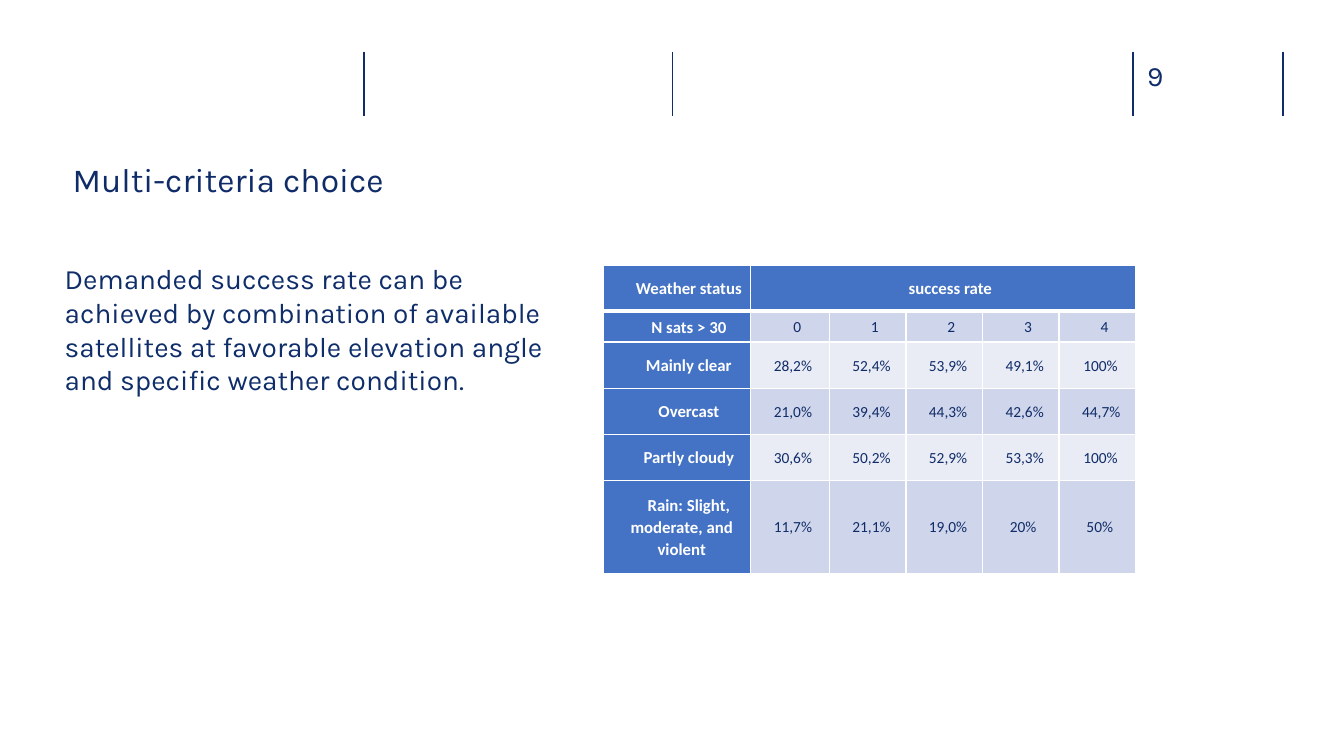
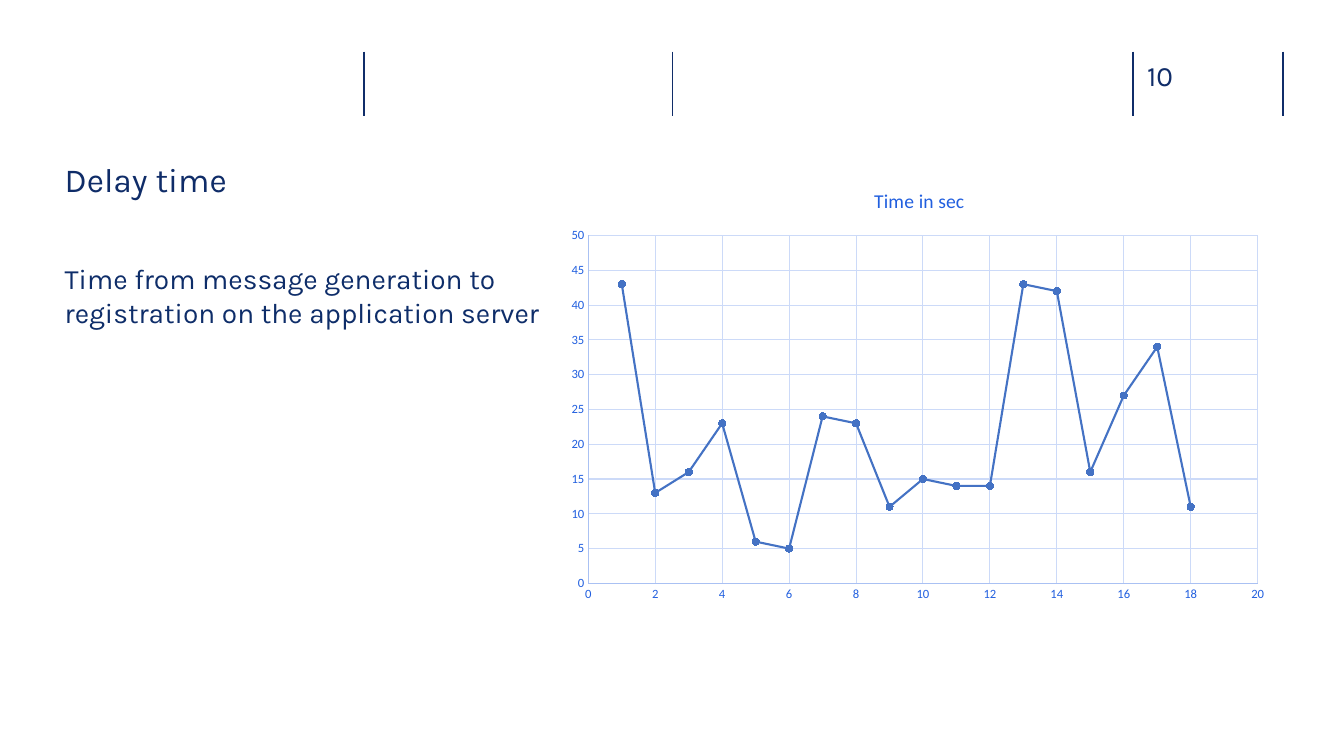
from dataclasses import dataclass

from lxml.etree import SubElement
from pptx import Presentation
from pptx.chart.data import XyChartData
from pptx.dml.color import RGBColor
from pptx.enum.chart import XL_CHART_TYPE, XL_MARKER_STYLE, XL_TICK_MARK
from pptx.enum.text import MSO_ANCHOR, MSO_AUTO_SIZE, PP_ALIGN
from pptx.oxml.ns import qn
from pptx.util import Cm, Pt

COLORS = {
    "navy": "102D69",
    "title": "0F2C68",
    "body": "0E2D69",
    "white": "FFFFFF",
    "blue": "4472C4",
    "band_dark": "CFD5EA",
    "band_light": "E9EBF5",
    "label": "215FDF",
    "axis": "AAC1F3",
    "grid": "CCDAF8",
}
TEXT_FONT = "Karla"
DATA_FONT = "Calibri"
RULE_XS = (9.17, 16.94, 28.55, 32.33)
RULE_TOP, RULE_BOTTOM = 1.3, 2.92


@dataclass
class Box:
    left: float
    top: float
    width: float
    height: float

    def emu(self) -> tuple:
        return Cm(self.left), Cm(self.top), Cm(self.width), Cm(self.height)


@dataclass
class Page:
    number: int
    title: str
    text: str
    title_indent: float = 0


@dataclass
class CellStyle:
    fill: str
    color: str
    size: float
    bold: bool
    align: PP_ALIGN
    margin: float


NUMBER_BOX = Box(28.91, 1.47, 1.85, 0.86)
TITLE_BOX = Box(1.63, 4.01, 14.58, 2.16)
BODY_BOX = Box(1.63, 6.6, 12.14, 9.42)
TABLE_BOX = Box(15.21, 6.68, 13.41, 7.77)
CHART_BOX = Box(14.1, 4.27, 18.14, 11.1)

PAGES = (
    Page(9, "Multi-criteria choice",
         "Demanded success rate can be achieved by combination of available "
         "satellites at favorable elevation angle and specific weather condition.", 0.2),
    Page(10, "Delay time",
         "Time from message generation to registration on the application server"),
)

WEATHER_ROWS = (
    ("Weather status", "success rate"),
    ("N sats > 30", "0", "1", "2", "3", "4"),
    ("Mainly clear", "28,2%", "52,4%", "53,9%", "49,1%", "100%"),
    ("Overcast", "21,0%", "39,4%", "44,3%", "42,6%", "44,7%"),
    ("Partly cloudy", "30,6%", "50,2%", "52,9%", "53,3%", "100%"),
    ("Rain: Slight, moderate, and violent", "11,7%", "21,1%", "19,0%", "20%", "50%"),
)
COL_WIDTHS = (3.71, 1.98) + (1.93,) * 4
ROW_HEIGHTS = (1.16, 0.78, 1.16, 1.16, 1.16, 2.35)
VALUE_MARGINS = {5: 0.22, 4: 0.25, 3: 0.33}
DELAYS = (43, 13, 16, 23, 6, 5, 24, 23, 11, 15, 14, 14, 43, 42, 16, 27, 34, 11)


def rgb(name: str) -> RGBColor:
    return RGBColor.from_string(COLORS[name])


def set_font(font, name: str, size: float, color: str, bold: bool = False) -> None:
    font.name = name
    font.size = Pt(size)
    font.bold = bold
    font.color.rgb = rgb(color)


def set_indent(p, margin: float, first: float = 0) -> None:
    pPr = p._p.get_or_add_pPr()
    pPr.set("marL", str(int(Cm(margin))))
    pPr.set("indent", str(int(Cm(first))))


def fill_text(sp, box: Box, text: str, size: float, color: str, indent: float = 0) -> None:
    sp.left, sp.top, sp.width, sp.height = box.emu()
    tf = sp.text_frame
    tf.text = text
    tf.word_wrap = True
    tf.auto_size = MSO_AUTO_SIZE.NONE
    tf.vertical_anchor = MSO_ANCHOR.TOP
    tf.margin_left = tf.margin_top = tf.margin_right = tf.margin_bottom = 0
    p = tf.paragraphs[0]
    set_indent(p, indent)
    p.alignment = PP_ALIGN.LEFT
    p.space_before = Pt(0)
    SubElement(p._p.get_or_add_pPr(), qn("a:buNone"))
    set_font(p.font, TEXT_FONT, size, color)


def add_rule(s, x: float) -> None:
    line = s.shapes.add_connector(1, Cm(x), Cm(RULE_TOP), Cm(x), Cm(RULE_BOTTOM))
    line.line.color.rgb = rgb("navy")
    line.line.width = Pt(1)
    SubElement(line._element.spPr, qn("a:effectLst"))


def add_page(prs, page: Page):
    s = prs.slides.add_slide(prs.slide_layouts[1])
    for x in RULE_XS:
        add_rule(s, x)
    number = s.shapes.add_textbox(*NUMBER_BOX.emu())
    fill_text(number, NUMBER_BOX, str(page.number), 20, "navy")
    fill_text(s.shapes.title, TITLE_BOX, page.title, 24, "title", page.title_indent)
    fill_text(s.placeholders[1], BODY_BOX, page.text, 20, "body")
    return s


def cell_style(row: int, col: int, text: str) -> CellStyle:
    if row == 0 or col == 0:
        margin = 0.23 if col == 0 else 0
        return CellStyle("blue", "white", 12, True, PP_ALIGN.CENTER, margin)
    fill = "band_dark" if row % 2 else "band_light"
    if row == 1:
        return CellStyle(fill, "title", 11, False, PP_ALIGN.CENTER, 0)
    return CellStyle(fill, "title", 11, False, PP_ALIGN.LEFT, VALUE_MARGINS[len(text)])


def set_borders(cell, row: int) -> None:
    widths = {"lnL": 1, "lnR": 1, "lnT": 3 if row == 1 else 1, "lnB": 3 if row == 0 else 1}
    tcPr = cell._tc.get_or_add_tcPr()
    for tag, width in widths.items():
        ln = SubElement(tcPr, qn(f"a:{tag}"), w=str(int(Pt(width))))
        SubElement(SubElement(ln, qn("a:solidFill")), qn("a:srgbClr"), val=COLORS["white"])


def format_cell(cell, row: int, col: int, text: str) -> None:
    style = cell_style(row, col, text)
    set_borders(cell, row)
    cell.fill.solid()
    cell.fill.fore_color.rgb = rgb(style.fill)
    cell.margin_left = cell.margin_right = cell.margin_top = cell.margin_bottom = 0
    cell.vertical_anchor = MSO_ANCHOR.MIDDLE
    cell.text = text
    p = cell.text_frame.paragraphs[0]
    set_indent(p, style.margin, 0.36)
    p.alignment = style.align
    p.line_spacing = 1.07
    set_font(p.font, DATA_FONT, style.size, style.color, style.bold)


def add_weather_table(s) -> None:
    table = s.shapes.add_table(len(ROW_HEIGHTS), len(COL_WIDTHS), *TABLE_BOX.emu()).table
    table.first_row = table.horz_banding = False
    for column, width in zip(table.columns, COL_WIDTHS):
        column.width = Cm(width)
    for row, height in zip(table.rows, ROW_HEIGHTS):
        row.height = Cm(height)
    table.cell(0, 1).merge(table.cell(0, len(COL_WIDTHS) - 1))
    for i, texts in enumerate(WEATHER_ROWS):
        for j, text in enumerate(texts):
            format_cell(table.cell(i, j), i, j, text)


def format_axis(axis, top: float, step: float) -> None:
    axis.minimum_scale, axis.maximum_scale, axis.major_unit = 0, top, step
    axis.major_tick_mark = axis.minor_tick_mark = XL_TICK_MARK.NONE
    axis.has_major_gridlines = True
    for line, color in ((axis.format.line, "axis"), (axis.major_gridlines.format.line, "grid")):
        line.color.rgb = rgb(color)
        line.width = Pt(0.75)
    set_font(axis.tick_labels.font, DATA_FONT, 9, "label")


def set_plot_layout(chart, **shares: float) -> None:
    plot_area = chart._chartSpace.chart.plotArea
    for old in plot_area.findall(qn("c:layout")):
        plot_area.remove(old)
    layout = SubElement(plot_area, qn("c:layout"))
    plot_area.insert(0, layout)
    manual = SubElement(layout, qn("c:manualLayout"))
    SubElement(manual, qn("c:layoutTarget"), val="inner")
    for tag in ("xMode", "yMode"):
        SubElement(manual, qn(f"c:{tag}"), val="edge")
    for tag, share in shares.items():
        SubElement(manual, qn(f"c:{tag}"), val=str(share))


def add_delay_chart(s) -> None:
    data = XyChartData()
    points = data.add_series("Series 1")
    for x, delay in enumerate(DELAYS, 1):
        points.add_data_point(x, delay)
    chart = s.shapes.add_chart(XL_CHART_TYPE.XY_SCATTER_LINES, *CHART_BOX.emu(), data).chart
    set_font(chart.font, DATA_FONT, 10, "title")
    chart.has_legend = False
    chart.has_title = True
    chart.chart_title.include_in_layout = False
    tf = chart.chart_title.text_frame
    tf.text = "Time in sec"
    set_font(tf.paragraphs[0].font, DATA_FONT, 14, "label")
    format_axis(chart.category_axis, 20, 2)
    format_axis(chart.value_axis, 50, 5)
    plot = chart.plots[0]
    plot.vary_by_categories = False
    series = plot.series[0]
    series.smooth = False
    series.format.line.color.rgb = rgb("blue")
    series.format.line.width = Pt(1.5)
    marker = series.marker
    marker.style = XL_MARKER_STYLE.CIRCLE
    marker.size = 5
    marker.format.fill.solid()
    marker.format.fill.fore_color.rgb = rgb("blue")
    marker.format.line.color.rgb = rgb("blue")
    set_plot_layout(chart, x=0.04, y=0.15, w=0.93, h=0.79)


def main() -> None:
    prs = Presentation()
    prs.slide_width, prs.slide_height = Cm(33.87), Cm(19.05)
    for page, add_content in zip(PAGES, (add_weather_table, add_delay_chart)):
        add_content(add_page(prs, page))
    prs.save("out.pptx")


if __name__ == "__main__":
    main()
